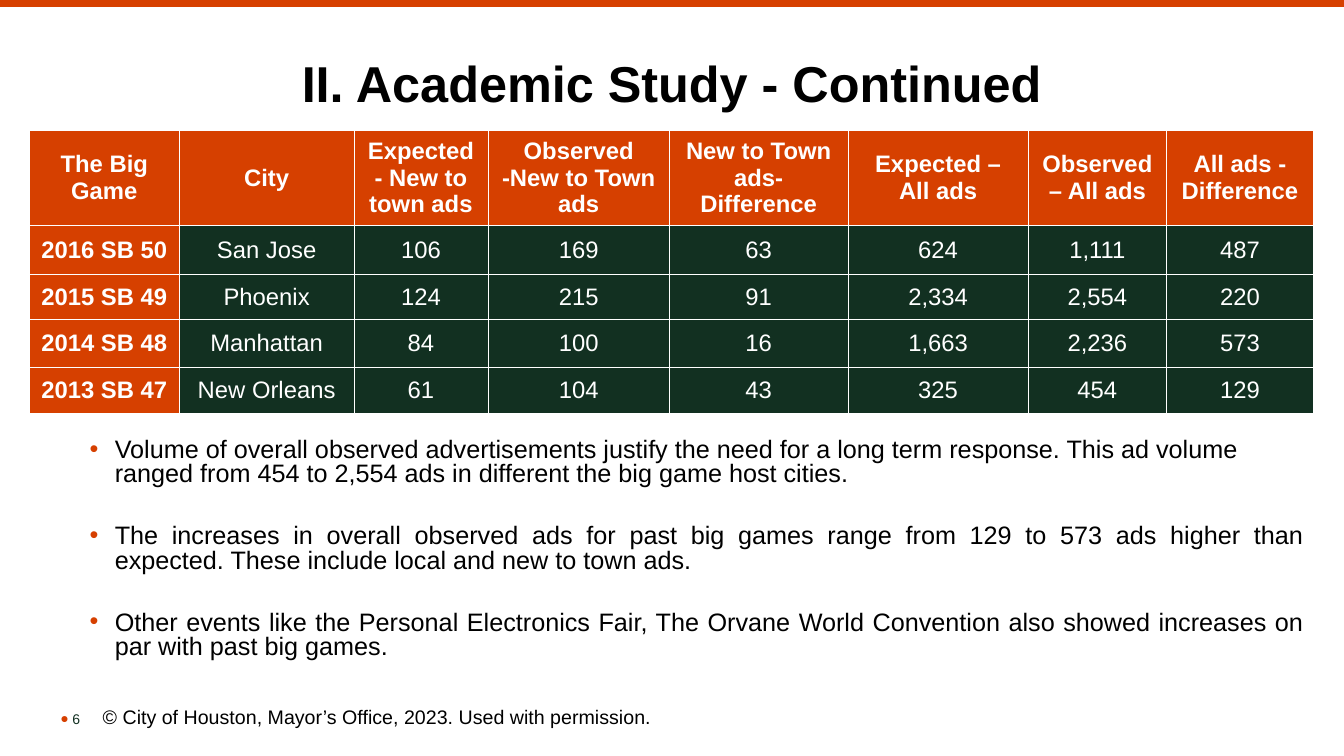
from lxml.etree import SubElement
from pptx import Presentation
from pptx.dml.color import RGBColor
from pptx.enum.shapes import MSO_CONNECTOR
from pptx.enum.text import MSO_ANCHOR, PP_ALIGN
from pptx.oxml.ns import qn
from pptx.util import Inches, Pt

W, H = 13.33, 7.5
ORANGE, GREEN, WHITE, BLACK = "D64000", "123021", "FFFFFF", "000000"
COLS = [1.49, 1.73, 1.33, 1.8, 1.77, 1.79, 1.37, 1.46]
ROWS = [0.95, 0.48, 0.45, 0.47, 0.46]
ADS = [
    ["The Big Game", "City", "Expected - New to town ads",
     "Observed -New to Town ads", "New to Town ads- Difference",
     "Expected – All ads", "Observed – All ads", "All ads - Difference"],
    ["2016 SB 50", "San Jose", "106", "169", "63", "624", "1,111", "487"],
    ["2015 SB 49", "Phoenix", "124", "215", "91", "2,334", "2,554", "220"],
    ["2014 SB 48", "Manhattan", "84", "100", "16", "1,663", "2,236", "573"],
    ["2013 SB 47", "New Orleans", "61", "104", "43", "325", "454", "129"],
]
FINDINGS = [
    "Volume of overall observed advertisements justify the need for a long term response. "
    "This ad volume ranged from 454 to 2,554 ads in different the big game host cities.",
    "The increases in overall observed ads for past big games range from 129 to 573 ads "
    "higher than expected. These include local and new to town ads.",
    "Other events like the Personal Electronics Fair, The Orvane World Convention also "
    "showed increases on par with past big games.",
]


def rgb(color):
    return RGBColor.from_string(color)


def set_all(target, values):
    for name, value in values.items():
        setattr(target, name, value)


def write(p, text, size, color=BLACK, bold=False, **layout):
    set_all(p, layout)
    r = p.add_run()
    r.text = text
    set_all(r.font, {"name": "Arial", "size": Pt(size), "bold": bold})
    r.font.color.rgb = rgb(color)


def add_bullet(p, char, left, hang):
    pPr = p._p.get_or_add_pPr()
    pPr.set("marL", str(Inches(left)))
    pPr.set("indent", str(-Inches(hang)))
    color = SubElement(pPr, qn("a:buClr"))
    SubElement(color, qn("a:srgbClr")).set("val", ORANGE)
    SubElement(pPr, qn("a:buFont")).set("typeface", "Arial")
    SubElement(pPr, qn("a:buChar")).set("char", char)


def text_frame(s, box, anchor=MSO_ANCHOR.TOP):
    tf = s.shapes.add_textbox(*map(Inches, box)).text_frame
    set_all(tf, {"word_wrap": True, "vertical_anchor": anchor})
    return tf


def add_top_rule(s, left, y, width):
    line = s.shapes.add_connector(
        MSO_CONNECTOR.STRAIGHT, *map(Inches, (left, y, left + width, y)))
    line.line.color.rgb = rgb(ORANGE)
    line.line.width = Pt(5)
    SubElement(line._element.spPr, qn("a:effectLst"))


def add_title(s, box, text):
    tf = text_frame(s, box, MSO_ANCHOR.MIDDLE)
    write(tf.paragraphs[0], text, 36, bold=True,
          alignment=PP_ALIGN.CENTER, line_spacing=0.9)


def style_cell(cell, fill):
    tcPr = cell._tc.get_or_add_tcPr()
    for side in ("lnL", "lnR", "lnT", "lnB"):
        ln = SubElement(tcPr, qn(f"a:{side}"))
        ln.set("w", str(Pt(0.5)))
        solid = SubElement(ln, qn("a:solidFill"))
        SubElement(solid, qn("a:srgbClr")).set("val", WHITE)
    cell.fill.solid()
    cell.fill.fore_color.rgb = rgb(fill)
    cell.vertical_anchor = MSO_ANCHOR.MIDDLE


def add_ads_table(s, box):
    table = s.shapes.add_table(len(ROWS), len(COLS), *map(Inches, box)).table
    table.horz_banding = False
    for col, width in zip(table.columns, COLS):
        col.width = Inches(width)
    for row, height in zip(table.rows, ROWS):
        row.height = Inches(height)
    for i, values in enumerate(ADS):
        for j, value in enumerate(values):
            heading = i == 0 or j == 0
            cell = table.cell(i, j)
            style_cell(cell, ORANGE if heading else GREEN)
            write(cell.text_frame.paragraphs[0], value, 17, WHITE, heading,
                  alignment=PP_ALIGN.CENTER)


def add_findings(s, box):
    tf = text_frame(s, box)
    for i, finding in enumerate(FINDINGS):
        p = tf.add_paragraph() if i else tf.paragraphs[0]
        set_all(p, {"level": 1, "line_spacing": 0.8, "space_before": Pt(27 if i else 0)})
        add_bullet(p, "•", 0.75, 0.25)
        write(p, finding, 18, alignment=PP_ALIGN.JUSTIFY if i else PP_ALIGN.LEFT)


def add_footer(s, left, top):
    p = text_frame(s, (left, top + 0.06, 0.55, 0.27), MSO_ANCHOR.MIDDLE).paragraphs[0]
    add_bullet(p, "●", 0.12, 0.12)
    write(p, "6", 10, GREEN)
    tf = text_frame(s, (left + 0.42, top, 6.79, 0.34))
    write(tf.paragraphs[0],
          "© City of Houston, Mayor’s Office, 2023. Used with permission.", 14)


def add_study_slide(prs):
    s = prs.slides.add_slide(prs.slide_layouts[6])
    margin = 0.29
    body = sum(COLS)
    add_top_rule(s, 0, 0.03, W)
    add_ads_table(s, (margin, 1.29, body, sum(ROWS)))
    add_title(s, (0, 0.23, W, H / 6), "II. Academic Study - Continued")
    add_findings(s, (margin, 4.31, body, 2.23))
    add_footer(s, 0.5, 6.94)


def main():
    prs = Presentation()
    set_all(prs, {"slide_width": Inches(W), "slide_height": Inches(H)})
    add_study_slide(prs)
    prs.save("out.pptx")


if __name__ == "__main__":
    main()
